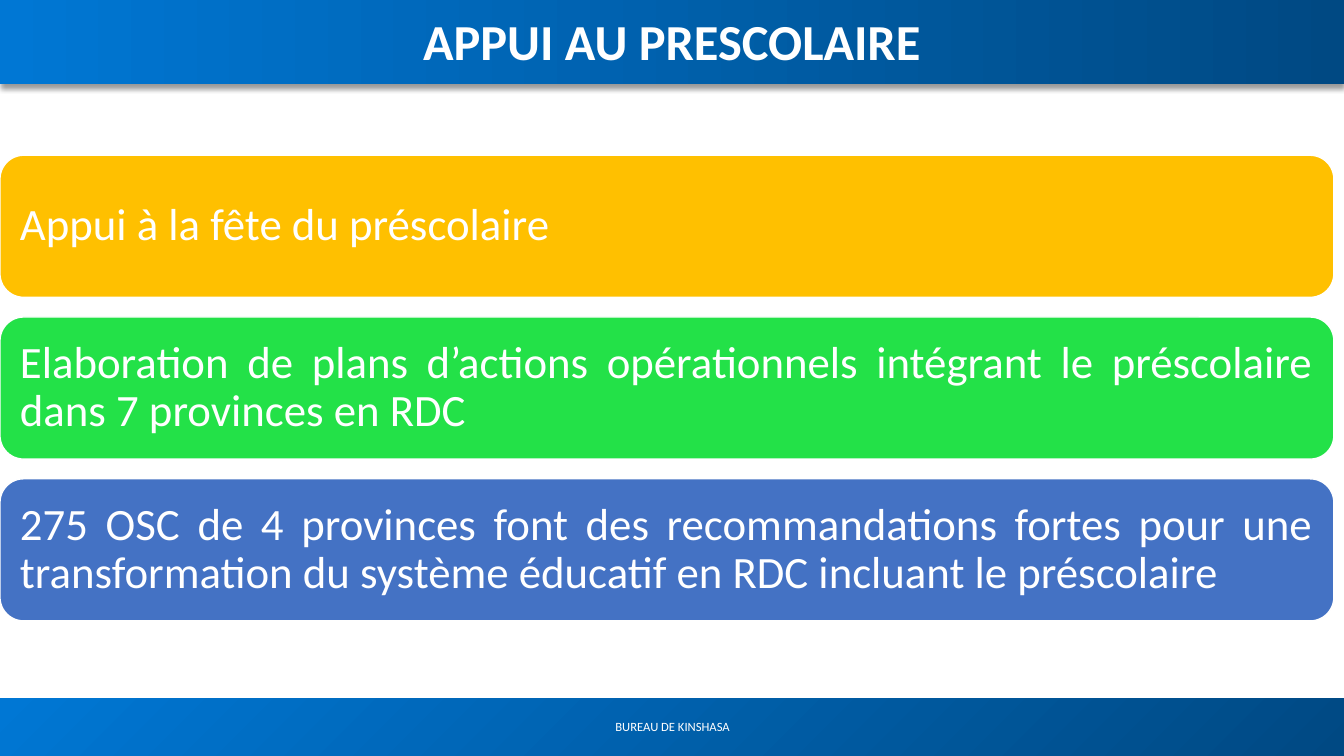
from lxml.etree import SubElement
from pptx import Presentation
from pptx.dml.color import RGBColor
from pptx.enum.shapes import MSO_SHAPE as Shape
from pptx.enum.text import MSO_ANCHOR as Anchor, PP_ALIGN as Align
from pptx.oxml.ns import qn
from pptx.util import Inches, Pt

TITLE = "APPUI AU PRESCOLAIRE"
FOOTER = "BUREAU DE KINSHASA"
CARDS = [
    ("Appui à la fête du préscolaire", "FFC000"),
    ("Elaboration de plans d’actions opérationnels intégrant le préscolaire "
     "dans 7 provinces en RDC", "23E148"),
    ("275 OSC de 4 provinces font des recommandations fortes pour une "
     "transformation du système éducatif en RDC incluant le préscolaire", "4472C4"),
]
LIGHT, DARK, WHITE = "0077D4", "004983", "FFFFFF"
FONT = "Calibri"

WIDTH, HEIGHT = 13.33, 7.5
HEADER_H, FOOTER_H = 0.83, 0.57
CARD_TOP, CARD_W, CARD_H, CARD_PITCH = 1.54, 13.23, 1.41, 1.605


def rgb(color):
    return RGBColor.from_string(color)


def box(at):
    return [Inches(v) for v in at]


def write(sp, text, size, align=Align.CENTER, bold=False, anchor=Anchor.MIDDLE,
          inset=(0, 0), spacing=0.9, after=0):
    """Fill a shape with one white paragraph; inset is (sides, top and bottom)."""
    tf = sp.text_frame
    tf.word_wrap = True
    tf.vertical_anchor = anchor
    tf.margin_left = tf.margin_right = Inches(inset[0])
    tf.margin_top = tf.margin_bottom = Inches(inset[1])
    p = tf.paragraphs[0]
    p.alignment, p.line_spacing, p.space_after = align, spacing, Pt(after)
    r = p.add_run()
    r.text = text
    r.font.name, r.font.size, r.font.bold = FONT, Pt(size), bold
    r.font.color.rgb = rgb(WHITE)


def add_band(slide, top, height, colors, angle):
    sp = slide.shapes.add_shape(Shape.RECTANGLE, *box((0, top, WIDTH, height)))
    sp.shadow.inherit = False
    sp.line.fill.background()
    sp.fill.gradient()
    sp.fill.gradient_angle = angle
    for stop, color in zip(sp.fill.gradient_stops, colors):
        stop.color.rgb = rgb(color)
    return sp


def drop_shadow(sp, blur, distance, opacity):
    """Cast a black shadow straight down."""
    effects = sp._element.spPr.find(qn("a:effectLst"))
    shadow = SubElement(effects, qn("a:outerShdw"), blurRad=str(Pt(blur)),
                        dist=str(Pt(distance)), dir="5400000", algn="t",
                        rotWithShape="0")
    black = SubElement(shadow, qn("a:srgbClr"), val="000000")
    SubElement(black, qn("a:alpha"), val=str(opacity * 1000))


def add_card(slide, row, text, color):
    at = (0, CARD_TOP + row * CARD_PITCH, CARD_W, CARD_H)
    sp = slide.shapes.add_shape(Shape.ROUNDED_RECTANGLE, *box(at))
    sp.shadow.inherit = False
    sp.fill.solid()
    sp.fill.fore_color.rgb = rgb(color)
    sp.line.color.rgb = rgb(WHITE)
    sp.line.width = Pt(1)
    write(sp, text, 32, align=Align.JUSTIFY, inset=(0.13, 0.13), after=11)


def main():
    prs = Presentation()
    prs.slide_width, prs.slide_height = Inches(WIDTH), Inches(HEIGHT)
    slide = prs.slides.add_slide(prs.slide_layouts[6])

    add_band(slide, HEIGHT - FOOTER_H, FOOTER_H, (DARK, LIGHT), 135)
    header = add_band(slide, 0, HEADER_H, (LIGHT, DARK), 0)
    drop_shadow(header, blur=4, distance=3, opacity=40)

    title = slide.shapes.add_textbox(*box((0, -0.02, WIDTH, 0.8)))
    write(title, TITLE, 36, bold=True, spacing=1.07, after=8)
    footer = slide.shapes.add_textbox(*box((4.89, 7.1, 3.56, 0.24)))
    write(footer, FOOTER, 9, anchor=Anchor.TOP, inset=(0.1, 0.05))

    for row, (text, color) in enumerate(CARDS):
        add_card(slide, row, text, color)
    prs.save("out.pptx")


if __name__ == "__main__":
    main()
